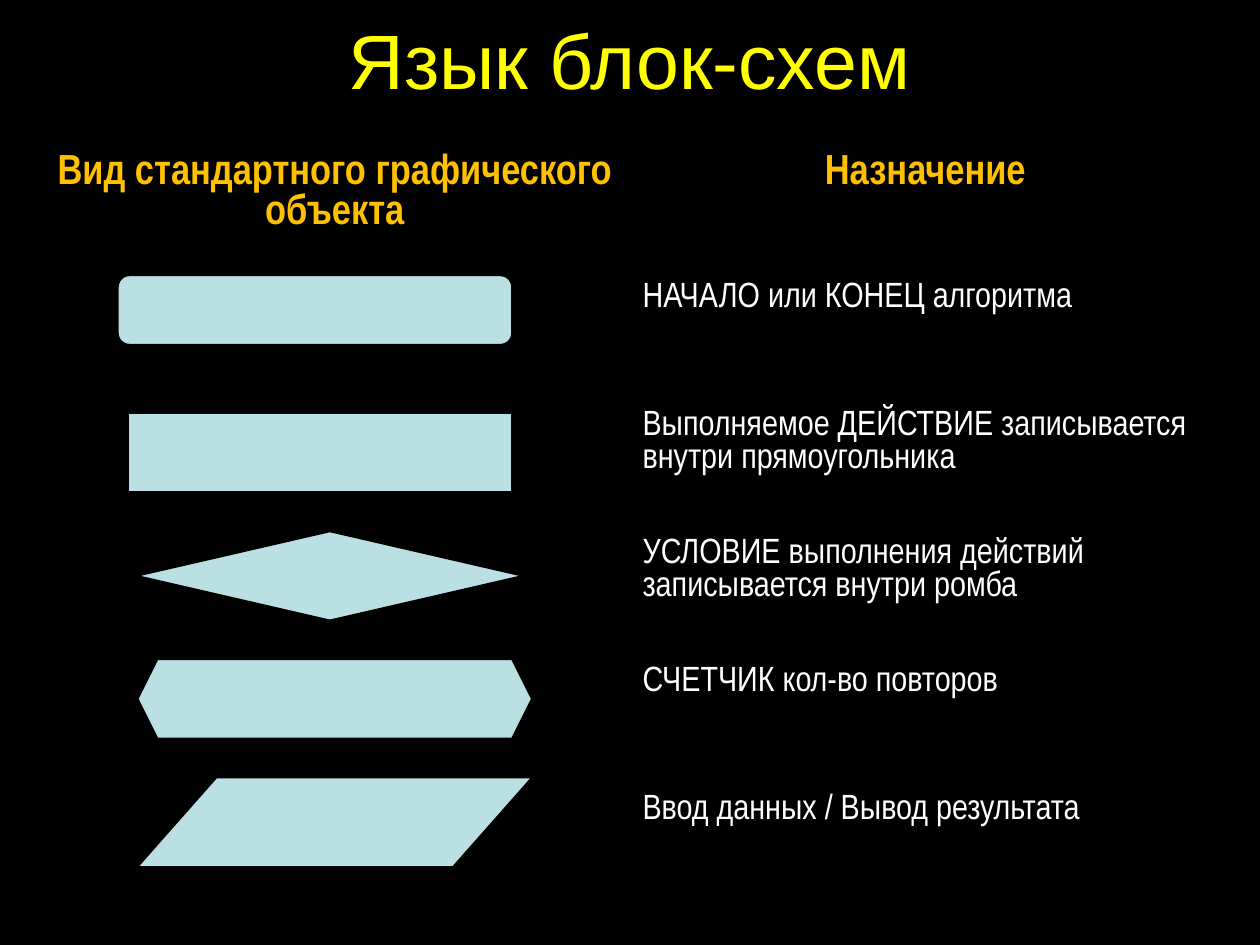
from lxml.etree import SubElement
from pptx import Presentation
from pptx.dml.color import RGBColor
from pptx.enum.shapes import MSO_SHAPE as Shape
from pptx.enum.text import MSO_ANCHOR as Anchor, PP_ALIGN as Align
from pptx.oxml.ns import qn
from pptx.util import Pt

COLORS = {
    "background": "000000",
    "title": "FFFF00",
    "header": "FFC000",
    "text": "FFFFFF",
    "symbol": "BBE0E3",
    "line": "000000",
}


def color(name):
    return RGBColor.from_string(COLORS[name])


def write(frame, text, size, color_name, font="Arial Narrow", bold=False, align=Align.LEFT):
    paragraph = frame.paragraphs[0]
    paragraph.alignment = align
    run = paragraph.add_run()
    run.text = text
    run.font.name = font
    run.font.size = Pt(size)
    run.font.bold = bold
    run.font.color.rgb = color(color_name)


presentation = Presentation()
presentation.slide_width, presentation.slide_height = Pt(720), Pt(540)
slide = presentation.slides.add_slide(presentation.slide_layouts[5])
slide.background.fill.solid()
slide.background.fill.fore_color.rgb = color("background")

title = slide.shapes.title
title.left, title.top, title.width, title.height = Pt(0), Pt(0), Pt(720), Pt(67.5)
title.text_frame.vertical_anchor = Anchor.MIDDLE
write(title.text_frame, "Язык блок-схем", 44, "title", font="Arial", align=Align.CENTER)

# Table: headings, then the purpose of each symbol in the right column
headings = ["Вид стандартного графического объекта", "Назначение"]
purposes = [
    "НАЧАЛО или КОНЕЦ алгоритма",
    "Выполняемое ДЕЙСТВИЕ записывается внутри прямоугольника",
    "УСЛОВИЕ выполнения действий записывается внутри ромба",
    "СЧЕТЧИК кол-во повторов",
    "Ввод данных / Вывод результата",
]
table = slide.shapes.add_table(
    len(purposes) + 1, 2, Pt(22.5), Pt(84.4), Pt(675), Pt(438.6)
).table
table.first_row = table.horz_banding = False
for row in table.rows:
    row.height = Pt(73.1)

for cell in table.iter_cells():
    properties = cell._tc.get_or_add_tcPr()
    for side in ("a:lnL", "a:lnR", "a:lnT", "a:lnB"):
        border = SubElement(properties, qn(side), w=str(Pt(1)))
        border_fill = SubElement(border, qn("a:solidFill"))
        SubElement(border_fill, qn("a:srgbClr"), val=COLORS["line"])
    cell.fill.background()

for column, heading in enumerate(headings):
    write(table.cell(0, column).text_frame, heading, 24, "header", bold=True, align=Align.CENTER)
for row, purpose in enumerate(purposes, start=1):
    write(table.cell(row, 1).text_frame, purpose, 20, "text")

# Flowchart symbols over the left column: preset, left, top, width, height
symbols = [
    (Shape.ROUNDED_RECTANGLE, 67.5, 157.5, 225, 39.4),
    (Shape.RECTANGLE, 73.2, 236.2, 219.4, 45),
    (Shape.DIAMOND, 78.8, 303.8, 219.4, 50.6),
    (Shape.HEXAGON, 78.8, 376.9, 225, 45),
    (Shape.FLOWCHART_DATA, 78.8, 444.4, 225, 50.9),
]
for preset, *box in symbols:
    symbol = slide.shapes.add_shape(preset, *map(Pt, box))
    symbol.shadow.inherit = False
    symbol.fill.solid()
    symbol.fill.fore_color.rgb = color("symbol")
    symbol.line.color.rgb = color("line")
    symbol.line.width = Pt(0.75)

presentation.save("out.pptx")
